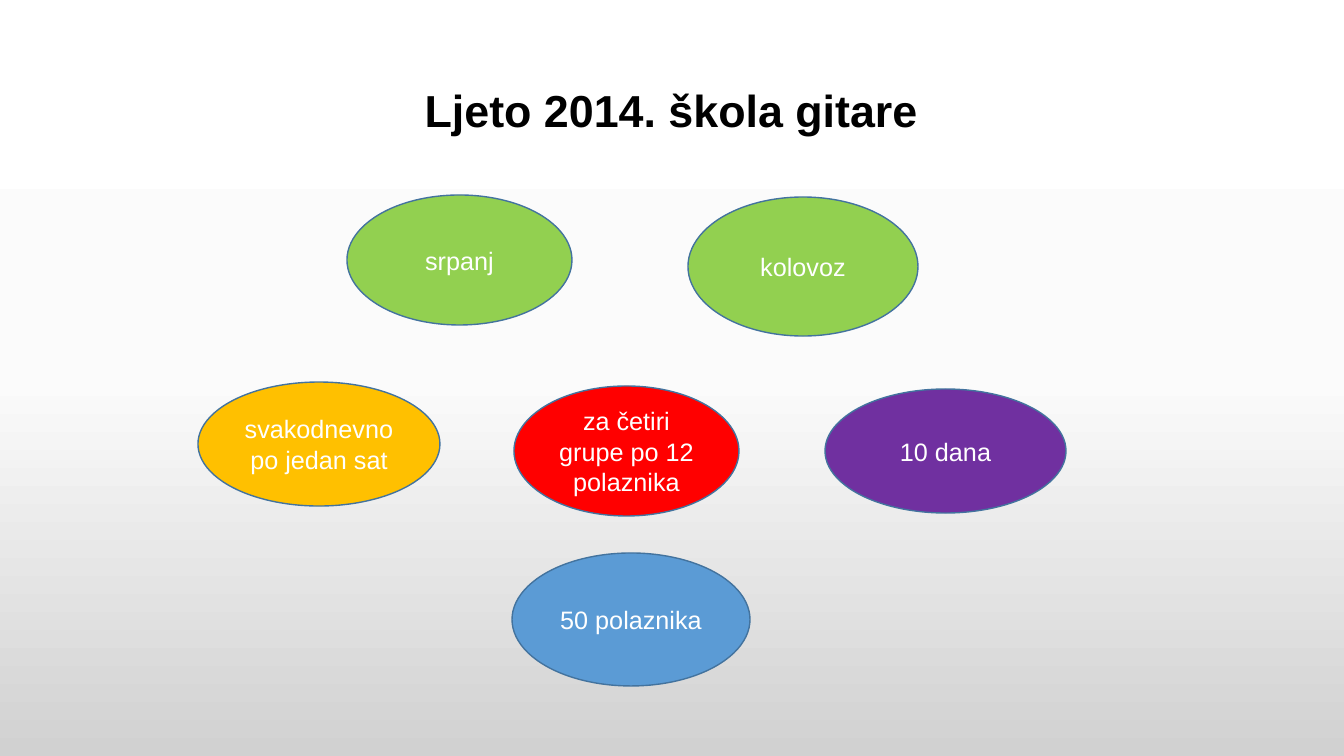
from copy import deepcopy

from pptx import Presentation
from pptx import util as u
from pptx.dml.color import RGBColor
from pptx.enum import shapes, text
from pptx.oxml.ns import qn

WIDTH, HEIGHT = 1344, 756
COLORS = {
    "black": "000000",
    "white": "FFFFFF",
    "middle": "FBFBFB",
    "gray": "D1D1D1",
    "outline": "43739E",
    "green": "92D050",
    "red": "FF0000",
    "purple": "7030A0",
    "yellow": "FFC000",
    "blue": "5B9BD5",
}


def px(length):
    return u.Emu(round(length * u.Inches(7.5) / HEIGHT))


def color(name):
    return RGBColor.from_string(COLORS[name])


class SlideBuilder:
    font_name = "Arial"

    def __init__(self, page):
        self.page = page

    def background(self, stops):
        fill = self.page.background.fill
        fill.gradient()
        fill.gradient_angle = 270
        stop_list = self.page.element.find(".//" + qn("a:gsLst"))
        while len(stop_list) < len(stops):
            stop_list.append(deepcopy(stop_list[-1]))
        for stop, (position, name) in zip(fill.gradient_stops, stops):
            stop.position = position
            stop.color.rgb = color(name)

    def label(self, shape, words, size, name, bold=False):
        frame = shape.text_frame
        frame.text = words
        frame.word_wrap = True
        frame.auto_size = text.MSO_AUTO_SIZE.NONE
        frame.vertical_anchor = text.MSO_ANCHOR.MIDDLE
        para = frame.paragraphs[0]
        para.alignment = text.PP_ALIGN.CENTER
        font = para.runs[0].font
        font.name = self.font_name
        font.size = u.Pt(size)
        font.bold = bold
        font.color.rgb = color(name)
        return para

    def title(self, words, left, top, width, height):
        title = self.page.shapes.title
        title.left, title.top = px(left), px(top)
        title.width, title.height = px(width), px(height)
        self.label(title, words, 32, "black", bold=True).line_spacing = 0.9

    def ellipse(self, words, fill, left, top, width, height):
        oval = self.page.shapes.add_shape(
            shapes.MSO_SHAPE.OVAL, px(left), px(top), px(width), px(height)
        )
        oval.shadow.inherit = False
        oval.fill.solid()
        oval.fill.fore_color.rgb = color(fill)
        oval.line.color.rgb = color("outline")
        oval.line.width = u.Pt(1)
        self.label(oval, words, 18, "white")


def main():
    deck = Presentation()
    deck.slide_width, deck.slide_height = px(WIDTH), px(HEIGHT)
    builder = SlideBuilder(deck.slides.add_slide(deck.slide_layouts[5]))
    builder.background([(0, "white"), (0.5, "middle"), (1, "gray")])
    builder.title("Ljeto 2014. škola gitare", 92, 40, 1159, 146)
    for oval in [
        ("za četiri grupe po 12 polaznika", "red", 514, 386, 225, 130),
        ("srpanj", "green", 347, 195, 225, 130),
        ("kolovoz", "green", 688, 197, 230, 139),
        ("10 dana", "purple", 825, 389, 241, 124),
        ("svakodnevno po jedan sat", "yellow", 198, 382, 242, 124),
        ("50 polaznika", "blue", 512, 553, 238, 133),
    ]:
        builder.ellipse(*oval)
    deck.save("out.pptx")


if __name__ == "__main__":
    main()
